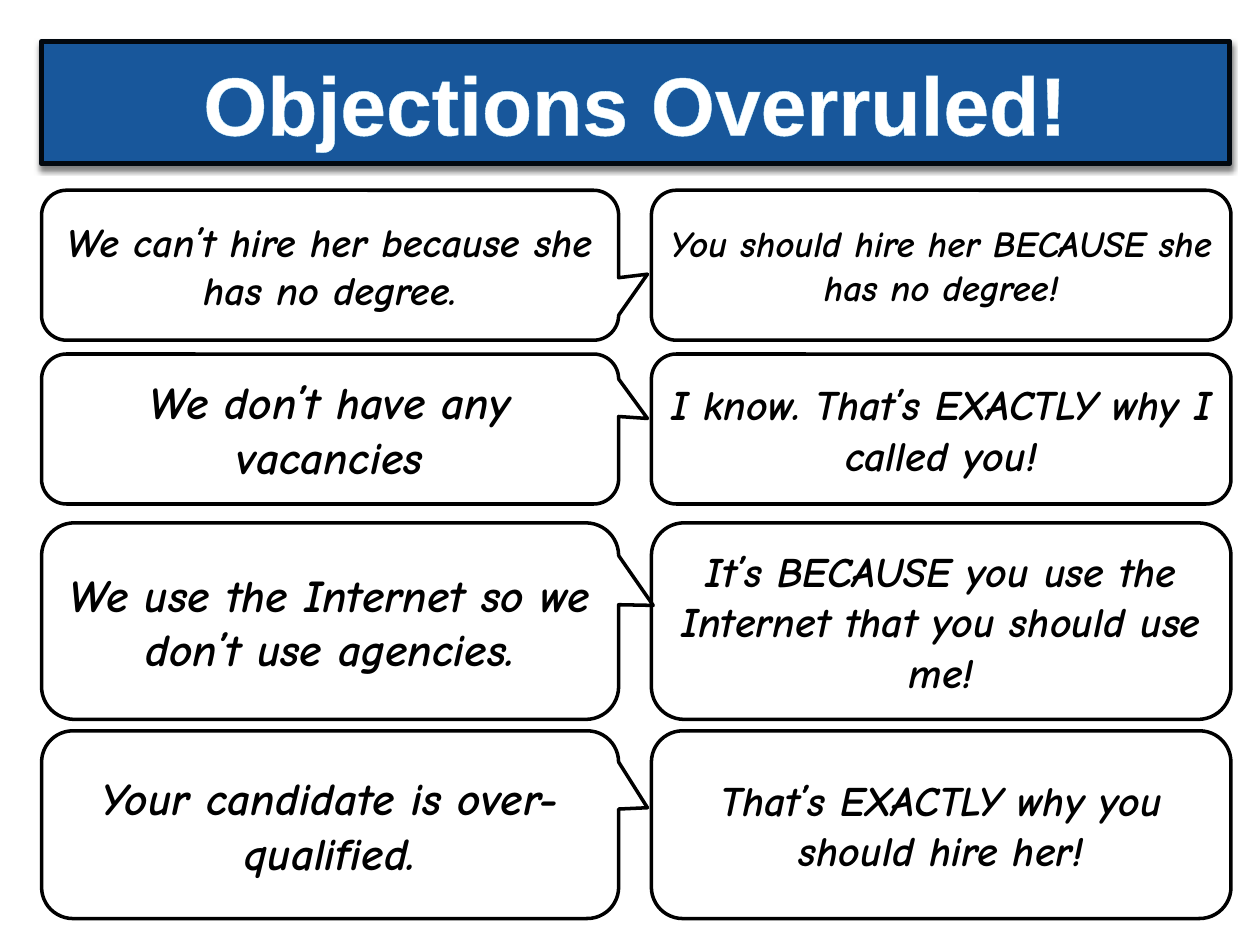
from lxml import etree
from pptx import Presentation
from pptx.dml.color import RGBColor
from pptx.enum.shapes import MSO_SHAPE
from pptx.enum.text import MSO_ANCHOR, PP_ALIGN
from pptx.oxml import parse_xml
from pptx.oxml.ns import nsdecls
from pptx.util import Inches, Pt

RECTANGLE = MSO_SHAPE.RECTANGLE
CALLOUT = MSO_SHAPE.ROUNDED_RECTANGULAR_CALLOUT
MIDDLE = MSO_ANCHOR.MIDDLE
CENTER = PP_ALIGN.CENTER

BLUE = RGBColor(0x18, 0x57, 0x9B)
NAVY = RGBColor(0x02, 0x08, 0x0F)
WHITE = RGBColor(0xFF, 0xFF, 0xFF)
BLACK = RGBColor(0, 0, 0)
TITLE_OUTLINE = RGBColor(0xCC, 0xF2, 0xFD)

TITLE = "Objections Overruled!"
LEFT = 0.33
REPLY_LEFT = 5.17
OBJECTION_WIDTH, REPLY_WIDTH = 4.58, 4.6
CORNER = 0.167
INSET = 0.07

# Each row: top, height, then objection and reply as (text, size, tail x, tail y)
ROWS = [
    (1.51, 1.19,
     ("We can’t hire her because she has no degree.", 23, 0.55, 0.06),
     ("You should hire her BECAUSE she has no degree!", 21, 0.5, -0.19)),
    (2.81, 1.19,
     ("We don’t have any vacancies", 26, 0.55, -0.07),
     ("I know. That’s EXACTLY why I called you!", 24, 0.5, -0.18)),
    (4.15, 1.56,
     ("We use the Internet so we don’t use agencies.", 26, 0.56, -0.08),
     ("It’s BECAUSE you use the Internet that you should use me!", 24, 0.5, -0.25)),
    (5.8, 1.49,
     ("Your candidate is over-qualified.", 26, 0.55, -0.09),
     ("That’s EXACTLY why you should hire her!", 24, 0.5, -0.03)),
]


def add_box(slide, kind, box, fill, line, line_width, text, size, font_name, color):
    """Add a filled, outlined shape with centred bold text; return shape and run."""
    shape = slide.shapes.add_shape(kind, *(Inches(value) for value in box))
    shape.shadow.inherit = False
    shape.fill.solid()
    shape.fill.fore_color.rgb = fill
    shape.line.color.rgb = line
    shape.line.width = Pt(line_width)
    frame = shape.text_frame
    frame.word_wrap = True
    frame.vertical_anchor = MIDDLE
    frame.margin_left = frame.margin_right = Inches(INSET)
    paragraph = frame.paragraphs[0]
    paragraph.alignment = CENTER
    run = paragraph.add_run()
    run.text = text
    run.font.name = font_name
    run.font.size = Pt(size)
    run.font.bold = True
    run.font.color.rgb = color
    return shape, run


def add_callout(slide, left, top, width, height, speech):
    text, size, tail_x, tail_y = speech
    shape, run = add_box(slide, CALLOUT, (left, top, width, height), WHITE, BLACK, 2,
                         text, size, "Comic Neue", BLACK)
    run.font.italic = True
    for index, value in enumerate((tail_x, tail_y, CORNER)):
        shape.adjustments[index] = value


def add_title(slide):
    shape, run = add_box(slide, RECTANGLE, (LEFT, 0.33, 9.43, 0.97), BLUE, NAVY, 3,
                         TITLE, 47, "Arial", WHITE)
    # Soft shadow straight below the banner
    effects = shape.element.spPr.find("{*}effectLst")
    shadow = parse_xml(
        f'<a:outerShdw {nsdecls("a")} blurRad="{Pt(3)}" dist="{Pt(2)}" dir="5400000" '
        'rotWithShape="0"><a:srgbClr val="000000"><a:alpha val="50000"/></a:srgbClr>'
        '</a:outerShdw>')
    effects.append(shadow)
    # Thin pale outline around the letters
    outline = etree.fromstring(
        f'<a:ln {nsdecls("a")} w="{Pt(1)}"><a:solidFill>'
        f'<a:srgbClr val="{TITLE_OUTLINE}"/></a:solidFill></a:ln>')
    run.font.fill  # the text fill follows the outline
    run._r.get_or_add_rPr().insert(0, outline)


def main():
    presentation = Presentation()
    presentation.slide_width = Inches(10)
    presentation.slide_height = Inches(7.5)
    slide = presentation.slides.add_slide(presentation.slide_layouts[6])

    add_title(slide)

    # Replies go behind the tails of the objections
    for top, height, objection, reply in ROWS:
        add_callout(slide, REPLY_LEFT, top, REPLY_WIDTH, height, reply)
        add_callout(slide, LEFT, top, OBJECTION_WIDTH, height, objection)

    presentation.save("out.pptx")


if __name__ == "__main__":
    main()
